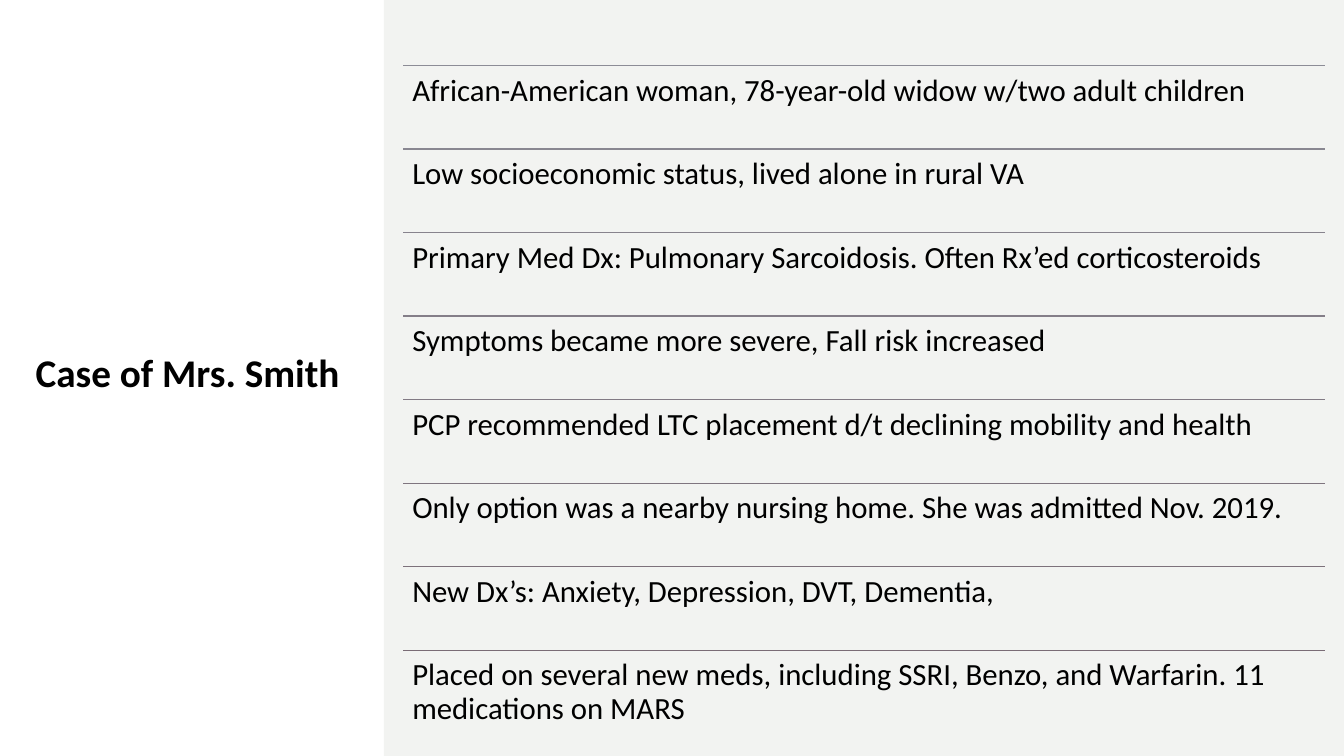
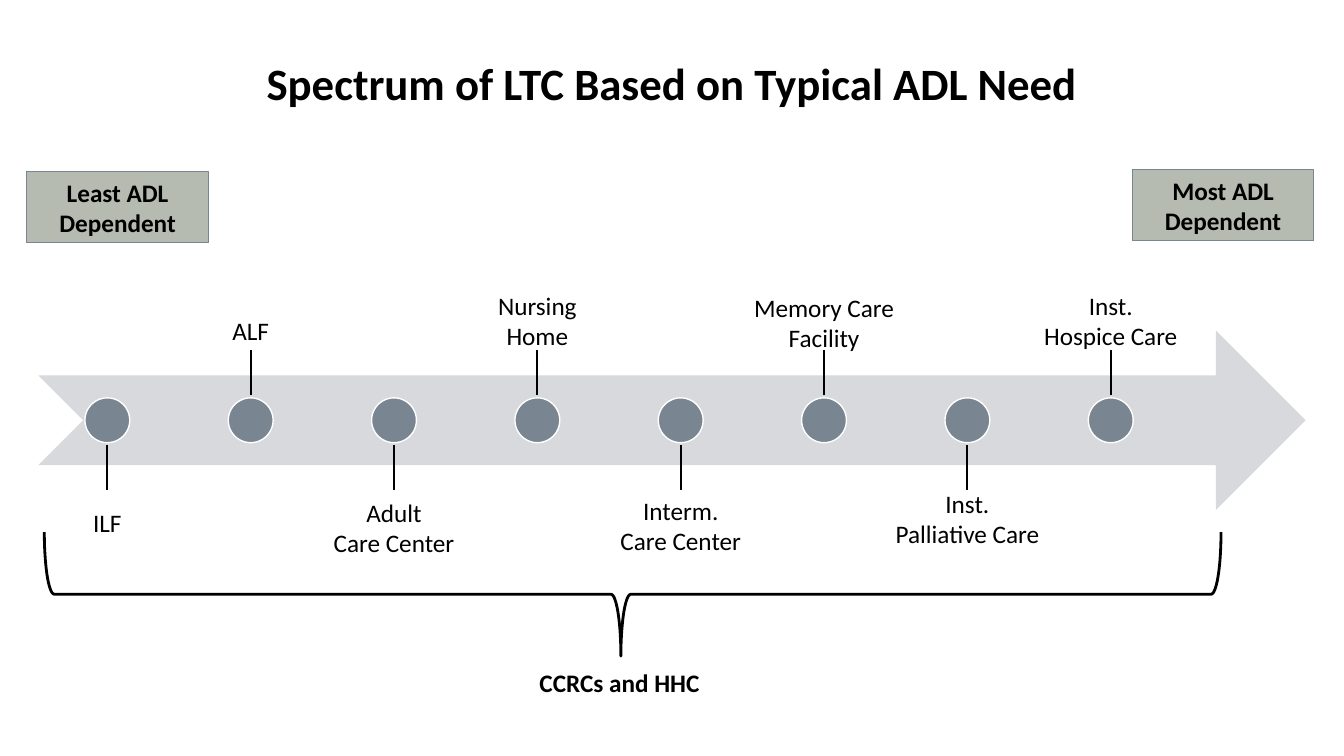
from dataclasses import dataclass

from lxml.etree import SubElement
from pptx import Presentation
from pptx.dml.color import RGBColor
from pptx.enum.shapes import MSO_CONNECTOR as Link, MSO_SHAPE as Preset
from pptx.enum.text import MSO_ANCHOR as Anchor, PP_ALIGN as Align
from pptx.oxml.ns import qn
from pptx.util import Inches, Pt

COLORS = {
    "ink": "000000",
    "white": "FFFFFF",
    "panel": "F2F3F1",
    "rule_first": "8C8C96",
    "rule_last": "7A6C76",
    "arrow": "D7D9DC",
    "slate": "7A8592",
    "sage": "B5BBB0",
}
FONT = "Calibri"

CASE_FACTS = [
    "African-American woman, 78-year-old widow w/two adult children",
    "Low socioeconomic status, lived alone in rural VA",
    "Primary Med Dx: Pulmonary Sarcoidosis. Often Rx’ed corticosteroids",
    "Symptoms became more severe, Fall risk increased",
    "PCP recommended LTC placement d/t declining mobility and health",
    "Only option was a nearby nursing home. She was admitted Nov. 2019.",
    "New Dx’s: Anxiety, Depression, DVT, Dementia,",
    "Placed on several new meds, including SSRI, Benzo, and Warfarin. 11 medications on MARS",
]

CARE_SETTINGS = [
    (["ILF"], 96),
    (["ALF"], 11),
    (["Adult", "Care Center"], 90),
    (["Nursing", "Home"], 14),
    (["Interm.", "Care Center"], 89),
    (["Memory Care", "Facility"], 15),
    (["Inst.", "Palliative Care"], 85),
    (["Inst.", "Hospice Care"], 14),
]


@dataclass
class Box:
    left: float
    top: float
    width: float
    height: float

    def percent_area(self, x, y, width, height):
        return Box(
            self.left + self.width * x / 100,
            self.top + self.height * y / 100,
            self.width * width / 100,
            self.height * height / 100,
        )

    def emu(self):
        return [Inches(v) for v in (self.left, self.top, self.width, self.height)]


PAGE = Box(0, 0, 13.33, 7.5)


def rgb(color):
    return RGBColor.from_string(COLORS.get(color, color))


def blend(first, last, share):
    pairs = zip(rgb(first), rgb(last))
    return "".join(f"{round(a + (b - a) * share):02X}" for a, b in pairs)


def write(frame, lines, size, bold=False, align=Align.CENTER, spacing=None):
    frame.word_wrap = True
    for index, line in enumerate(lines):
        paragraph = frame.paragraphs[0] if index == 0 else frame.add_paragraph()
        paragraph.alignment = align
        if spacing:
            paragraph.line_spacing = spacing
        run = paragraph.add_run()
        run.text = line
        run.font.name = FONT
        run.font.size = Pt(size)
        run.font.bold = bold
        run.font.color.rgb = rgb("ink")


def add_text(slide, box, lines, size, anchor=Anchor.TOP, inset=None, **style):
    frame = slide.shapes.add_textbox(*box.emu()).text_frame
    frame.vertical_anchor = anchor
    if inset:
        frame.margin_left = frame.margin_right = Inches(inset)
        frame.margin_top = frame.margin_bottom = Inches(inset)
    write(frame, lines, size, **style)


def add_title(slide, box, title, size):
    add_text(slide, box, [title], size, Anchor.BOTTOM, bold=True, spacing=1.1)


def add_preset(slide, preset, box, fill=None, line=None, weight=1):
    shape = slide.shapes.add_shape(preset, *box.emu())
    shape.shadow.inherit = False
    if fill:
        shape.fill.solid()
        shape.fill.fore_color.rgb = rgb(fill)
    else:
        shape.fill.background()
    if line:
        shape.line.color.rgb = rgb(line)
        shape.line.width = Pt(weight)
    else:
        shape.line.fill.background()
    return shape


def add_line(slide, box, color, weight):
    left, top, width, height = box.emu()
    line = slide.shapes.add_connector(
        Link.STRAIGHT, left, top, left + width, top + height
    )
    line.line.color.rgb = rgb(color)
    line.line.width = Pt(weight)
    SubElement(line._element.spPr, qn("a:effectLst"))


def add_fact_list(slide, box, facts):
    row_height = 100 / len(facts)
    for index, fact in enumerate(facts):
        row = box.percent_area(0, index * row_height, 100, row_height)
        rule_color = blend("rule_first", "rule_last", index / (len(facts) - 1))
        add_line(slide, row.percent_area(0, 0, 100, 0), rule_color, 1)
        add_text(slide, row, [fact], 22, inset=0.09, align=Align.LEFT, spacing=0.9)


def add_care_arrow(slide, box, settings):
    add_preset(slide, Preset.NOTCHED_RIGHT_ARROW, box, "arrow")
    dot_size = box.height / 4
    label_width, label_height = 14.4, 40
    for index, (label, edge) in enumerate(settings):
        center = 5.45 + 11.31 * index
        above = index % 2 == 1
        middle = box.percent_area(center, 50, 0, 0)
        dot = Box(
            middle.left - dot_size / 2, middle.top - dot_size / 2, dot_size, dot_size
        )
        add_preset(slide, Preset.OVAL, dot, "slate", "white")
        stem = box.percent_area(center, 11 if above else 64, 0, 25)
        add_line(slide, stem, "ink", 1.5)
        label_top = edge - label_height if above else edge
        label_box = box.percent_area(
            center - label_width / 2, label_top, label_width, label_height
        )
        anchor = Anchor.BOTTOM if above else Anchor.TOP
        add_text(slide, label_box, label, 18, anchor)


def add_dependence_tag(slide, box, caption):
    tag = add_preset(slide, Preset.RECTANGLE, box, "sage", "slate", 0.75)
    write(tag.text_frame, [caption], 18, bold=True)


def add_bottom_brace(slide, box):
    upright = Box(
        box.left + (box.width - box.height) / 2,
        box.top + (box.height - box.width) / 2,
        box.height,
        box.width,
    )
    brace = add_preset(slide, Preset.LEFT_BRACE, upright, line="ink", weight=2)
    brace.adjustments[0] = 0.08
    brace.adjustments[1] = 0.49
    brace.rotation = 270


def build_case_slide(slide, page):
    split = 200 / 7
    side = page.percent_area(0, 0, split, 100)
    panel = page.percent_area(split, 0, 100 - split, 100)
    add_title(slide, side.percent_area(0, 38, 97.64, 14.93), "Case of Mrs. Smith", 28)
    add_preset(slide, Preset.RECTANGLE, panel, "panel")
    add_fact_list(slide, panel.percent_area(2, 8.67, 96, 88.4), CASE_FACTS)


def build_spectrum_slide(slide, page):
    title_box = page.percent_area(0, 3.87, 100, 11.33)
    add_title(slide, title_box, "Spectrum of LTC Based on Typical ADL Need", 32)
    add_care_arrow(slide, page.percent_area(2.85, 43.73, 94.3, 23.73), CARE_SETTINGS)
    for caption, left, top in (
        ("Least ADL Dependent", 2, 22.67),
        ("Most ADL Dependent", 84.25, 22.4),
    ):
        add_dependence_tag(slide, page.percent_area(left, top, 13.5, 9.47), caption)
    add_bottom_brace(slide, page.percent_area(3.3, 70.4, 87.55, 16.4))
    summary = page.percent_area(37.28, 87.6, 17.63, 5.33)
    add_text(slide, summary, ["CCRCs and HHC"], 18, bold=True)


def main():
    deck = Presentation()
    deck.slide_width = Inches(PAGE.width)
    deck.slide_height = Inches(PAGE.height)
    blank = deck.slide_layouts[6]
    for build in (build_case_slide, build_spectrum_slide):
        build(deck.slides.add_slide(blank), PAGE)
    deck.save("out.pptx")


if __name__ == "__main__":
    main()
